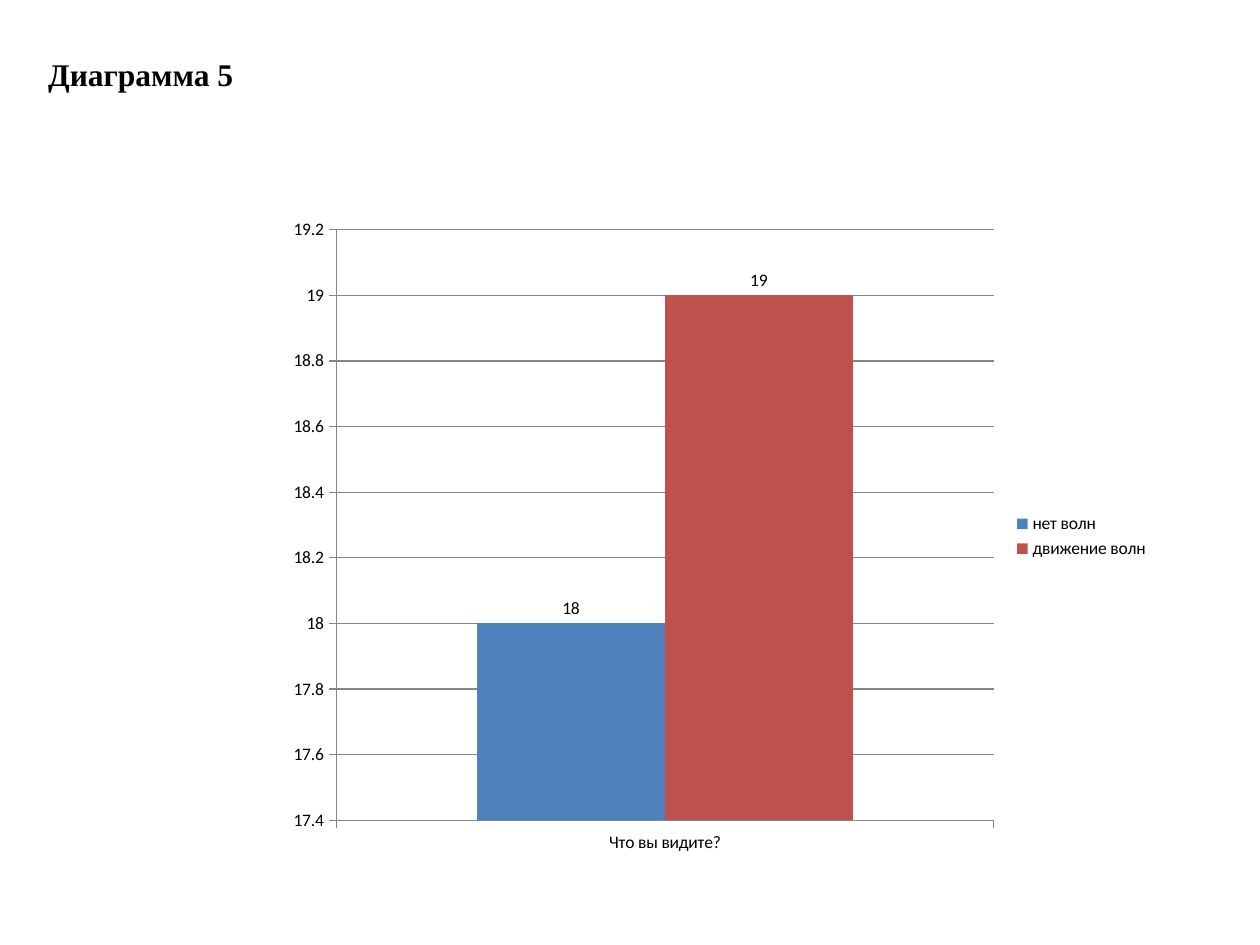
import pptx
import pptx.chart.data
import pptx.dml.color
import pptx.enum.chart
import pptx.enum.text
import pptx.util

Cm = pptx.util.Cm
Pt = pptx.util.Pt
RGB = pptx.dml.color.RGBColor
ENUM = pptx.enum.chart

BLACK = RGB(0x00, 0x00, 0x00)
GREY = RGB(0x86, 0x86, 0x86)
BLUE = RGB(0x4F, 0x81, 0xBD)
RED = RGB(0xC0, 0x50, 0x4D)


def style(font, name="Calibri", size=10, color=BLACK, bold=False):
    font.name = name
    font.size = Pt(size)
    font.bold = bold
    font.color.rgb = color


def write(frame, text, align=pptx.enum.text.PP_ALIGN.LEFT, **form):
    para = frame.paragraphs[0]
    para.alignment = align
    run = para.add_run()
    run.text = text
    style(run.font, **form)


class Page:
    """Holds the current slide and the look of its parts."""

    def __init__(self, deck):
        self.slide = deck.slides.add_slide(deck.slide_layouts[5])

    def title(self, text, left, top, width, height):
        shape = self.slide.shapes.title
        shape.left, shape.top = Cm(left), Cm(top)
        shape.width, shape.height = Cm(width), Cm(height)
        frame = shape.text_frame
        frame.word_wrap = False
        frame.auto_size = pptx.enum.text.MSO_AUTO_SIZE.NONE
        frame.vertical_anchor = pptx.enum.text.MSO_ANCHOR.TOP
        frame.margin_left = Cm(0.56)
        write(frame, text, name="Times New Roman", size=18, bold=True)

    def axis(self, axis):
        axis.major_tick_mark = ENUM.XL_TICK_MARK.OUTSIDE
        axis.minor_tick_mark = ENUM.XL_TICK_MARK.NONE
        axis.format.line.color.rgb = GREY
        axis.format.line.width = Pt(0.75)

    def bars(self, cats, series, left, top, width, height):
        """Add a column chart; series holds (name, values, colour)."""
        data = pptx.chart.data.CategoryChartData()
        data.categories = cats
        for name, vals, _ in series:
            data.add_series(name, vals)
        chart = self.slide.shapes.add_chart(
            ENUM.XL_CHART_TYPE.COLUMN_CLUSTERED,
            Cm(left), Cm(top), Cm(width), Cm(height), data).chart
        style(chart.font)
        chart.has_title = False
        chart.has_legend = True
        chart.legend.position = ENUM.XL_LEGEND_POSITION.RIGHT
        chart.legend.include_in_layout = False

        self.axis(chart.category_axis)
        scale = chart.value_axis
        self.axis(scale)
        scale.minimum_scale, scale.maximum_scale = 17.4, 19.2
        scale.major_unit = 0.2
        scale.tick_labels.number_format = "General"
        scale.tick_labels.number_format_is_linked = False
        grid = scale.major_gridlines.format.line
        grid.color.rgb = GREY
        grid.width = Pt(0.75)

        plot = chart.plots[0]
        plot.gap_width = 150
        plot.overlap = 0
        plot.vary_by_categories = False
        for item, (_, _, color) in zip(plot.series, series):
            item.format.fill.solid()
            item.format.fill.fore_color.rgb = color
            labels = item.data_labels
            labels.show_value = True
            labels.position = ENUM.XL_LABEL_POSITION.OUTSIDE_END
            style(labels.font)


def main():
    deck = pptx.Presentation()
    deck.slide_width, deck.slide_height = Cm(25.4), Cm(19.05)
    page = Page(deck)
    page.title("Диаграмма 5", 0.41, 0.99, 4.6, 1.27)
    page.bars(
        ["Что вы видите?"],
        [("нет волн", [18], BLUE), ("движение волн", [19], RED)],
        5.56, 4.17, 17.86, 13.28)
    deck.save("out.pptx")


if __name__ == "__main__":
    main()
